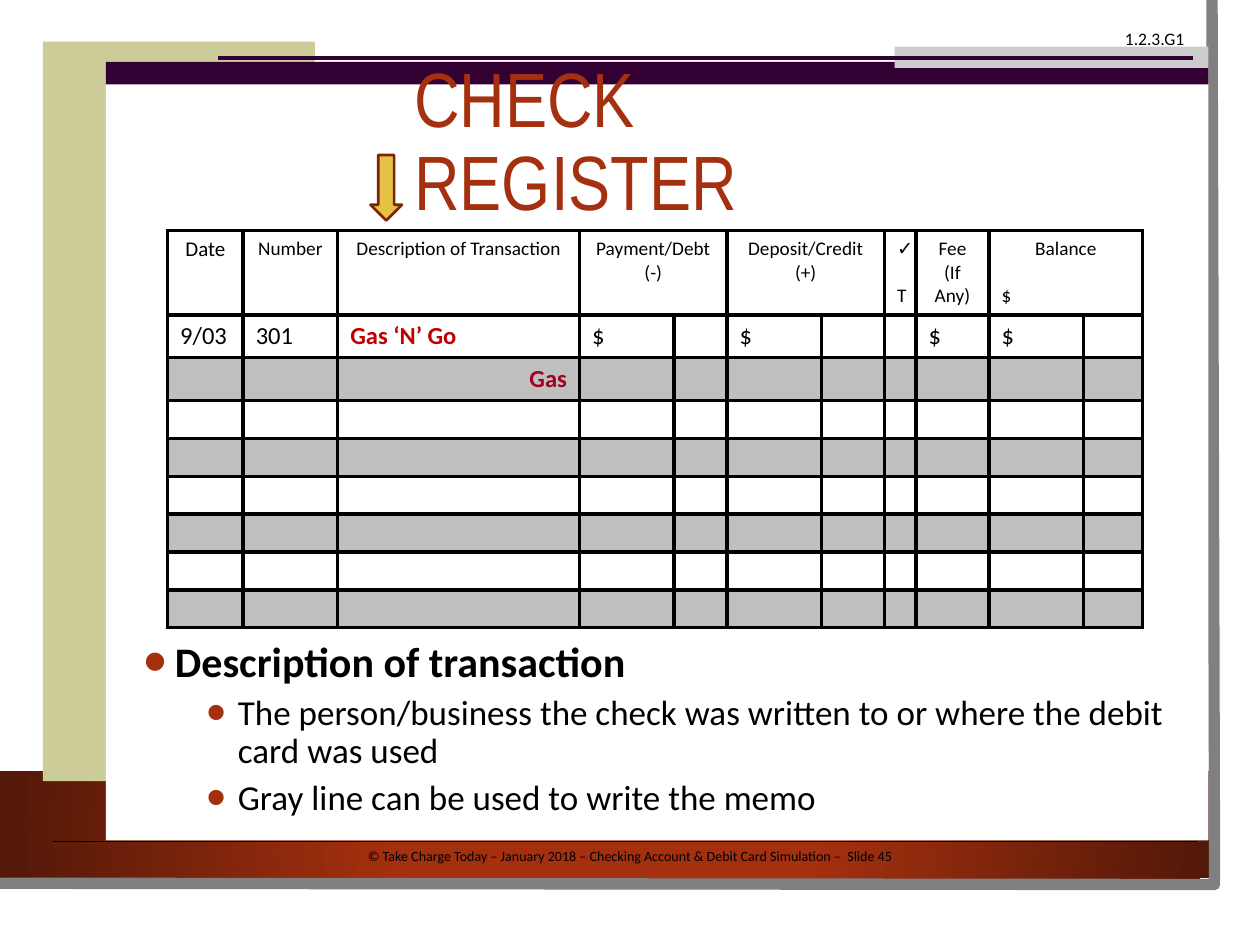
from lxml.etree import SubElement
from pptx import Presentation
from pptx.dml.color import RGBColor
from pptx.enum.shapes import MSO_CONNECTOR, MSO_SHAPE
from pptx.enum.text import MSO_ANCHOR, PP_ALIGN
from pptx.oxml import parse_xml
from pptx.oxml.ns import nsdecls, qn
from pptx.util import Inches, Pt

C = {
    "white": "FFFFFF", "black": "000000", "rust": "A5300F", "brown": "521808",
    "gray": "808080", "khaki": "CCCC99", "plum": "330033", "silver": "CCCCCC",
    "gold": "E5C243", "arrow": "7A240B", "band": "BFBFBF",
    "payee": "C00000", "memo": "A50021",
}
ALIGN = {"l": PP_ALIGN.LEFT, "c": PP_ALIGN.CENTER, "r": PP_ALIGN.RIGHT}

PANELS = [
    ((0.34, 0.33, 2.16, 5.87), "khaki"),
    ((0.84, 0.49, 8.75, 6.18), "white"),
    ((0.84, 0.49, 8.75, 0.18), "plum"),
    ((7.1, 0.37, 2.49, 0.17), "silver"),
]
RULES = [
    ((1.73, 0.46), (9.47, 0.46), "plum", 2),
    ((0.42, 6.68), (9.5, 6.68), "black", 0.75),
]
EDGE = [(962, 0), (964, 702), (-2, 701)]
FOOTER = ("© Take Charge Today – January 2018 – Checking Account & "
          "Debit Card Simulation –  Slide 45")
LABELS = [
    (FOOTER, (0.42, 6.68, 9.17, 0.24), {"size": 8, "align": "c"}),
    ("1.2.3.G1", (8.83, 0.17, 0.75, 0.27), {"size": 10}),
    ("CHECK REGISTER", (3.19, 0.52, 4.21, 1.25),
     {"size": 44, "font": "Arial Narrow", "color": "rust", "spacing": 0.9}),
]
BULLETS = [
    (0, "Description of transaction"),
    (1, "The person/business the check was written to or where the debit card was used"),
    (1, "Gray line can be used to write the memo"),
]
BULLET_LEVELS = [
    {"size": 24, "bold": True, "indent": 0.25, "before": 10},
    {"size": 20, "indent": 0.75, "before": 5},
]

COLS = [0.6, 0.75, 1.92, 0.75, 0.42, 0.75, 0.5, 0.25, 0.58, 0.75, 0.47]
ROWS = [0.67, 0.34, 0.34] + [0.3] * 6
SPLIT_COLS = (3, 5, 9)
BLANK_LINE = 13.4
HEADER = {
    0: [("Date", {"size": 12})],
    1: [("Number", {})],
    2: [("Description of Transaction", {})],
    3: [("Payment/Debt", {}), ("(-)", {})],
    5: [("Deposit/Credit", {}), ("(+)", {})],
    7: [("✓", {}), ("T", {"before": BLANK_LINE})],
    8: [("Fee (If Any)", {})],
    9: [("Balance", {}), ("$", {"before": BLANK_LINE, "align": "l"})],
}
ENTRY = {0: "9/03", 1: "301", 2: "Gas ‘N’ Go", 3: "$", 5: "$", 8: "$", 9: "$"}
CELLS = {(0, c): [(t, {"size": 11, "align": "c", **fmt}) for t, fmt in lines]
         for c, lines in HEADER.items()}
CELLS.update({(1, c): [(t, {"size": 14})] for c, t in ENTRY.items()})
CELLS[1, 2][0][1].update(bold=True, color="payee")
CELLS[2, 2] = [("Gas", {"size": 14, "bold": True, "color": "memo", "align": "r"})]


def rgb(name):
    return RGBColor.from_string(C[name])


def add_panel(s, box, fill, shape=MSO_SHAPE.RECTANGLE, line=None, width=0):
    sp = s.shapes.add_shape(shape, *map(Inches, box))
    sp.shadow.inherit = False
    sp.fill.solid()
    sp.fill.fore_color.rgb = rgb(fill)
    if line:
        sp.line.color.rgb = rgb(line)
        sp.line.width = Pt(width)
    else:
        sp.line.fill.background()
    return sp


def write(p, text, size, font="Calibri", color="black", bold=False,
          align="l", spacing=None, before=0):
    values = {"alignment": ALIGN[align], "line_spacing": spacing,
              "space_before": Pt(before)}
    for name, value in values.items():
        setattr(p, name, value)
    r = p.add_run()
    r.text = text
    for name, value in {"name": font, "size": Pt(size), "bold": bold}.items():
        setattr(r.font, name, value)
    r.font.color.rgb = rgb(color)


def add_frame(s, box, anchor):
    tf = s.shapes.add_textbox(*map(Inches, box)).text_frame
    tf.word_wrap = True
    tf.vertical_anchor = anchor
    return tf


def add_bullet(p, indent):
    pPr = p._p.get_or_add_pPr()
    pPr.set("marL", str(Inches(indent)))
    pPr.set("indent", str(-Inches(0.25)))
    SubElement(SubElement(pPr, qn("a:buClr")), qn("a:srgbClr"), val=C["rust"])
    SubElement(pPr, qn("a:buSzPct"), val="160000")
    SubElement(pPr, qn("a:buFont"), typeface="Arial")
    SubElement(pPr, qn("a:buChar"), char="•")


def add_borders(cell):
    tcPr = cell._tc.get_or_add_tcPr()
    for i, side in enumerate(("lnL", "lnR", "lnT", "lnB")):
        tcPr.insert(i, parse_xml(
            f'<a:{side} {nsdecls("a")} w="{Pt(2.25)}"><a:solidFill>'
            f'<a:srgbClr val="{C["black"]}"/></a:solidFill></a:{side}>'))


def add_register(s):
    box = (1.33, 1.83, sum(COLS), sum(ROWS))
    table = s.shapes.add_table(len(ROWS), len(COLS), *map(Inches, box)).table
    table.first_row = table.horz_banding = False
    for col, width in zip(table.columns, COLS):
        col.width = Inches(width)
    for row, height in zip(table.rows, ROWS):
        row.height = Inches(height)
    for c in SPLIT_COLS:
        table.cell(0, c).merge(table.cell(0, c + 1))
    for r in range(len(ROWS)):
        for c in range(len(COLS)):
            cell = table.cell(r, c)
            cell.fill.solid()
            cell.fill.fore_color.rgb = rgb("band" if r and r % 2 == 0 else "white")
            add_borders(cell)
            tf = cell.text_frame
            lines = CELLS.get((r, c), [])
            for i, (text, fmt) in enumerate(lines):
                write(tf.add_paragraph() if i else tf.paragraphs[0], text, **fmt)
            if not lines:
                SubElement(tf.paragraphs[0]._p, qn("a:endParaRPr"), sz="1200")


def add_background(s):
    add_panel(s, (0, 0, 9.83, 7.27), "white")
    floor = add_panel(s, (0, 6.12, 9.6, 0.85), "rust")
    floor.fill.gradient()
    for stop, color, pos in zip(floor.fill.gradient_stops, ("rust", "brown"), (0.34, 1)):
        stop.color.rgb = rgb(color)
        stop.position = pos
    grad = floor._element.spPr.find(qn("a:gradFill"))
    lin = grad.find(qn("a:lin"))
    grad.replace(lin, parse_xml(
        f'<a:path {nsdecls("a")} path="circle"><a:fillToRect l="50000" '
        't="50000" r="50000" b="50000"/></a:path>'))

    builder = s.shapes.build_freeform(*EDGE[0], scale=Inches(0.01))
    builder.add_line_segments(EDGE[1:], close=False)
    edge = builder.convert_to_shape()
    edge.shadow.inherit = False
    edge.fill.background()
    edge.line.color.rgb = rgb("gray")
    edge.line.width = Pt(6.5)

    for box, fill in PANELS:
        add_panel(s, box, fill)
    for start, end, color, width in RULES:
        rule = s.shapes.add_connector(MSO_CONNECTOR.STRAIGHT, *map(Inches, start + end))
        rule.line.color.rgb = rgb(color)
        rule.line.width = Pt(width)
        SubElement(rule._element.spPr, qn("a:effectLst"))


def main():
    prs = Presentation()
    prs.slide_width, prs.slide_height = Inches(10), Inches(7.5)
    s = prs.slides.add_slide(prs.slide_layouts[6])
    add_background(s)
    for text, box, fmt in LABELS:
        anchor = MSO_ANCHOR.MIDDLE if fmt["size"] > 40 else MSO_ANCHOR.TOP
        write(add_frame(s, box, anchor).paragraphs[0], text, **fmt)
    tf = add_frame(s, (1.04, 5, 8.5, 1.58), MSO_ANCHOR.MIDDLE)
    for i, (level, text) in enumerate(BULLETS):
        p = tf.add_paragraph() if i else tf.paragraphs[0]
        p.level = level
        fmt = dict(BULLET_LEVELS[level])
        add_bullet(p, fmt.pop("indent"))
        if i == 0:
            fmt["before"] = 0
        write(p, text, spacing=0.9, **fmt)
    add_panel(s, (2.94, 1.23, 0.25, 0.52), "gold", MSO_SHAPE.DOWN_ARROW, "arrow", 1.5)
    add_register(s)
    prs.save("out.pptx")


if __name__ == "__main__":
    main()
